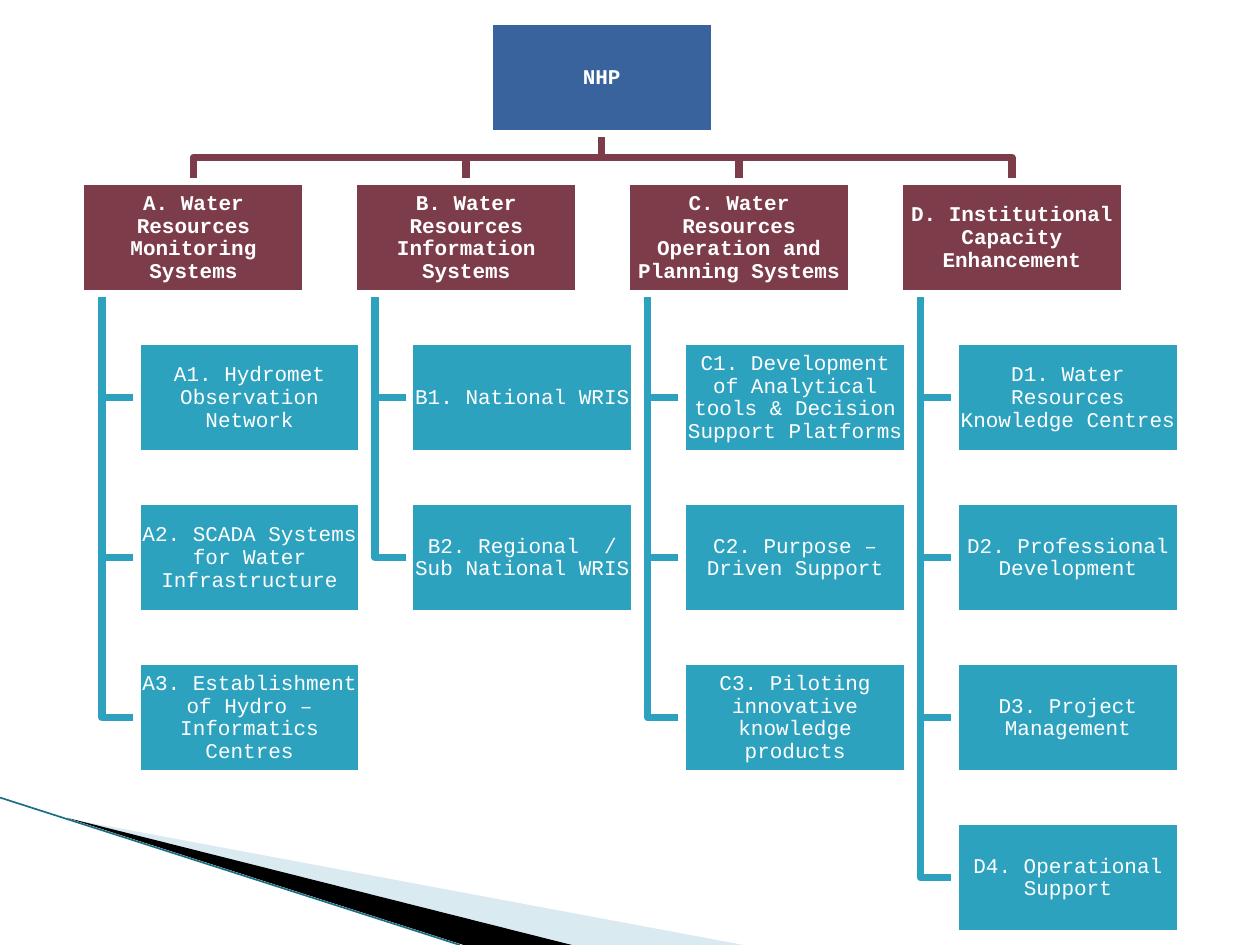
"""Builds the NHP component hierarchy slide."""
from dataclasses import dataclass

from lxml import etree
from pptx import Presentation
from pptx import util as u
from pptx.dml.color import RGBColor
from pptx.enum import shapes, text
from pptx.oxml import ns


@dataclass(frozen=True)
class Theme:
    """Colours, type and line sizes."""
    programme: str = "39639D"
    component: str = "7D3C4A"
    activity: str = "2DA2BF"
    label: str = "FFFFFF"
    pale_wedge: str = "A0CBDC"
    dark_wedge: str = "000000"
    wedge_edge: str = "1B6F83"
    font: str = "Courier New"
    size: float = 12
    rule: float = 4.33
    thin_rule: float = 0.95


def assign(target, values):
    """Set each named attribute of the target."""
    for name, value in values.items():
        setattr(target, name, value)


class HierarchySlide:
    """Draws styled elements on the current slide."""

    def __init__(self, theme, slide):
        self.theme = theme
        self.shapes = slide.shapes

    def stroke(self, line, colour, width):
        """Colour and size a line."""
        line.color.rgb = RGBColor.from_string(colour)
        line.width = u.Pt(width)

    def outline(self, points, closed):
        """Build an outline through points given in inches."""
        corners = [(u.Inches(x), u.Inches(y)) for x, y in points]
        builder = self.shapes.build_freeform(*corners[0], scale=1.0)
        builder.add_line_segments(corners[1:], close=closed)
        outline = builder.convert_to_shape()
        outline.shadow.inherit = False
        return outline

    def wedge(self, points, colour, opacity=100):
        """Draw a filled decorative wedge."""
        wedge = self.outline(points, True)
        wedge.fill.solid()
        wedge.fill.fore_color.rgb = RGBColor.from_string(colour)
        wedge.line.fill.background()
        if opacity < 100:
            tint = wedge.fill._xPr.find(".//" + ns.qn("a:srgbClr"))
            etree.SubElement(tint, ns.qn("a:alpha"), val=str(opacity * 1000))

    def edge(self, start, end):
        """Draw the thin straight edge of the wedge."""
        ends = [u.Inches(length) for length in (*start, *end)]
        edge = self.shapes.add_connector(shapes.MSO_CONNECTOR.STRAIGHT, *ends)
        self.stroke(edge.line, self.theme.wedge_edge, self.theme.thin_rule)
        etree.SubElement(edge._element.spPr, ns.qn("a:effectLst"))

    def branch(self, points, colour):
        """Draw an angled branch between two levels."""
        branch = self.outline(points, False)
        branch.fill.background()
        self.stroke(branch.line, colour, self.theme.rule)

    def box(self, left, top, label, colour, bold=False):
        """Draw a labelled box."""
        theme = self.theme
        box = self.shapes.add_shape(
            shapes.MSO_SHAPE.RECTANGLE,
            *(u.Inches(length) for length in (left, top, BOX_WIDTH, BOX_HEIGHT)))
        box.shadow.inherit = False
        box.fill.solid()
        box.fill.fore_color.rgb = RGBColor.from_string(colour)
        self.stroke(box.line, theme.label, theme.rule)
        frame = box.text_frame
        margins = dict.fromkeys(
            ("margin_left", "margin_right", "margin_top", "margin_bottom"), u.Inches(0.01))
        assign(frame, {"word_wrap": True, "vertical_anchor": text.MSO_ANCHOR.MIDDLE, **margins})
        paragraph = frame.paragraphs[0]
        assign(paragraph, {"alignment": text.PP_ALIGN.CENTER, "line_spacing": 0.9,
                           "space_after": u.Pt(0.35 * theme.size)})
        run = paragraph.add_run()
        run.text = label
        assign(run.font, {"name": theme.font, "size": u.Pt(theme.size), "bold": bold})
        run.font.color.rgb = RGBColor.from_string(theme.label)


BOX_WIDTH, BOX_HEIGHT = 1.79, 0.89
ROOT_LEFT, ROOT_TOP = 3.88, 0.17
FIRST_LEFT, COLUMN_STEP, ROW_STEP = 0.64, 2.165, 1.27
TRUNK_INSET, ACTIVITY_INSET = 0.17, 0.445
COMPONENT_TOP = ROOT_TOP + ROW_STEP
PROGRAMME = "NHP"
COMPONENTS = {
    "A. Water Resources Monitoring Systems": [
        "A1. Hydromet Observation Network",
        "A2. SCADA Systems for Water Infrastructure",
        "A3. Establishment of Hydro – Informatics Centres"],
    "B. Water Resources Information Systems": [
        "B1. National WRIS",
        "B2. Regional  / Sub National WRIS"],
    "C. Water Resources Operation and Planning Systems": [
        "C1. Development of Analytical tools & Decision Support Platforms",
        "C2. Purpose – Driven Support",
        "C3. Piloting innovative knowledge products"],
    "D. Institutional Capacity Enhancement": [
        "D1. Water Resources Knowledge Centres",
        "D2. Professional Development",
        "D3. Project Management",
        "D4. Operational Support"],
}


def main():
    """Build and save the slide."""
    deck = Presentation()
    deck.slide_width, deck.slide_height = u.Inches(10), u.Inches(7.5)
    theme = Theme()
    chart = HierarchySlide(theme, deck.slides.add_slide(deck.slide_layouts[6]))

    chart.wedge([(0.55, 6.5), (5.9, 7.5), (4.55, 7.5)], theme.pale_wedge, 40)
    chart.wedge([(0.53, 6.49), (4.54, 7.5), (3.68, 7.5)], theme.dark_wedge)
    chart.edge((0, 6.33), (3.65, 7.5))

    root_middle = ROOT_LEFT + BOX_WIDTH / 2
    root_bottom = ROOT_TOP + BOX_HEIGHT
    component_bottom = COMPONENT_TOP + BOX_HEIGHT
    crossbar = (root_bottom + COMPONENT_TOP) / 2
    columns = [(FIRST_LEFT + index * COLUMN_STEP, component, activities)
               for index, (component, activities) in enumerate(COMPONENTS.items())]

    for left, _, activities in columns:
        middle, trunk = left + BOX_WIDTH / 2, left + TRUNK_INSET
        chart.branch([(root_middle, root_bottom), (root_middle, crossbar),
                      (middle, crossbar), (middle, COMPONENT_TOP)], theme.component)
        for row in range(1, len(activities) + 1):
            level = COMPONENT_TOP + row * ROW_STEP + BOX_HEIGHT / 2
            chart.branch([(trunk, component_bottom), (trunk, level),
                          (left + ACTIVITY_INSET, level)], theme.activity)

    chart.box(ROOT_LEFT, ROOT_TOP, PROGRAMME, theme.programme, bold=True)
    for left, component, activities in columns:
        chart.box(left, COMPONENT_TOP, component, theme.component, bold=True)
        for row, activity in enumerate(activities, 1):
            chart.box(left + ACTIVITY_INSET, COMPONENT_TOP + row * ROW_STEP,
                      activity, theme.activity)
    deck.save("out.pptx")


if __name__ == "__main__":
    main()
